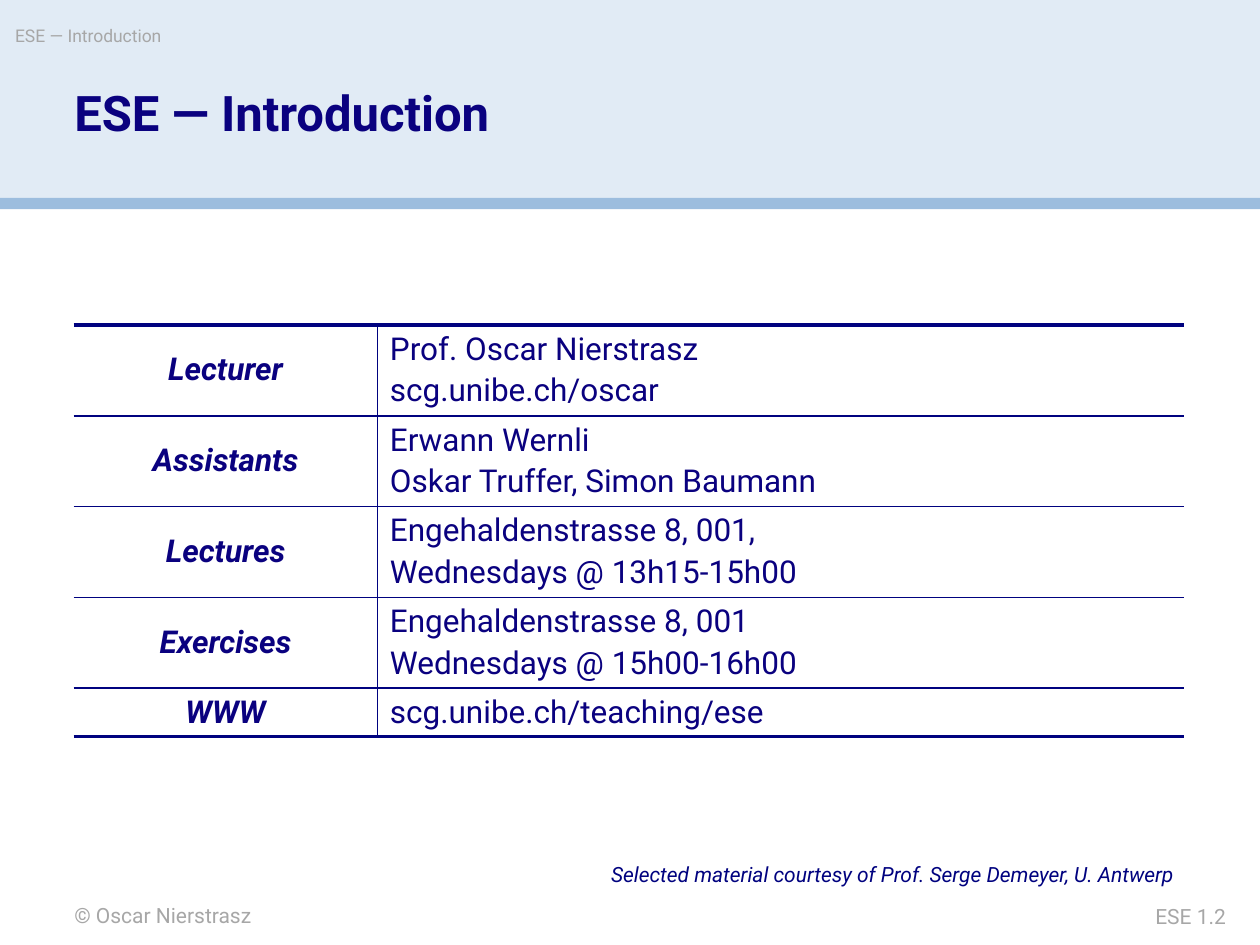
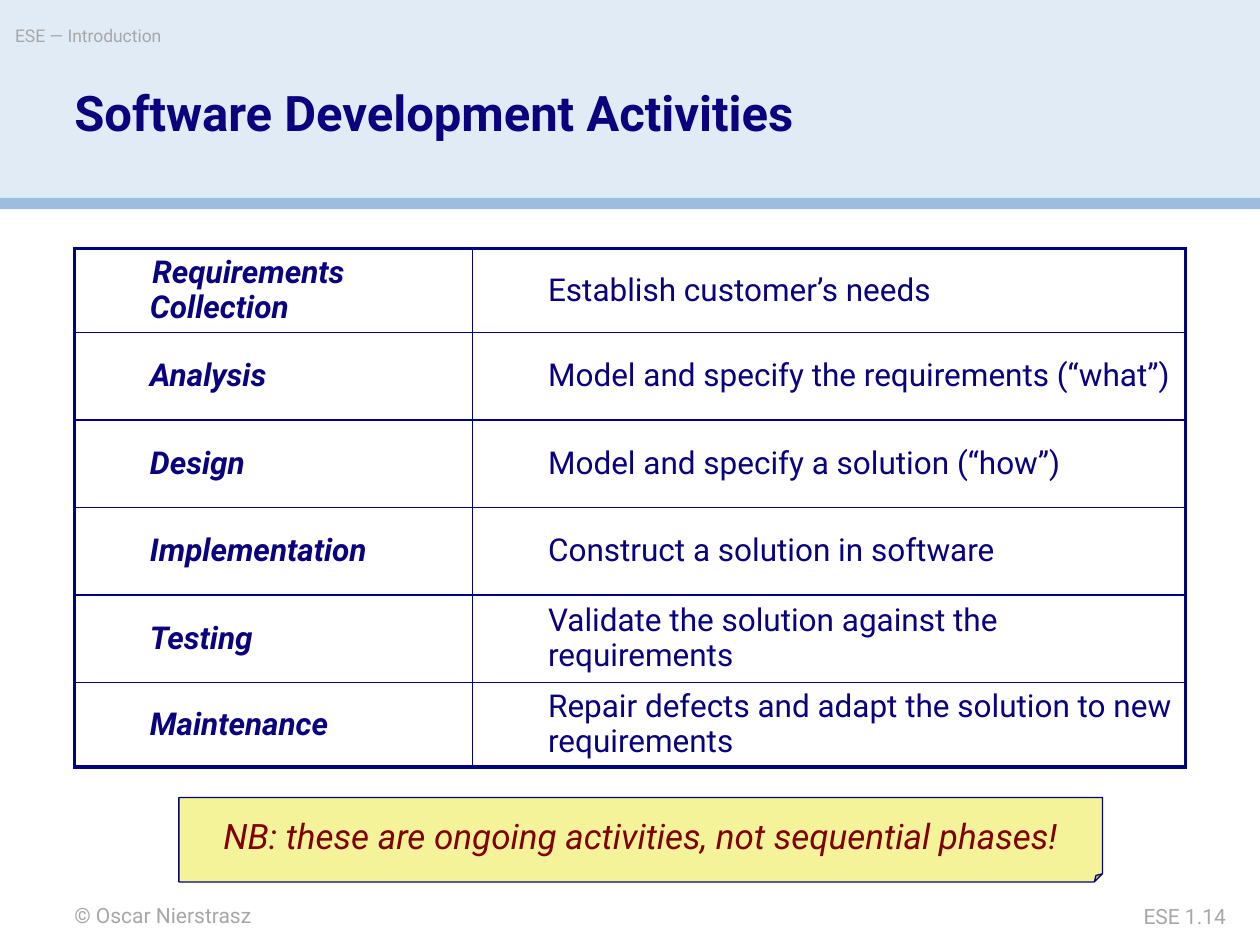
"""Build two lecture slides: the course overview and the development activities."""
from lxml import etree
from pptx import Presentation
from pptx.dml.color import RGBColor
from pptx.enum import shapes, text
from pptx.oxml import ns
from pptx.util import Pt

FONT = "Roboto"
INK = RGBColor(0x0A, 0x01, 0x7F)
RULE = RGBColor(0x00, 0x02, 0x7F)
OUTLINE = RGBColor(0x05, 0x02, 0x7D)
GRAY = RGBColor(0xA7, 0xA7, 0xA7)
BAND = RGBColor(0xE1, 0xEB, 0xF5)
STRIPE = RGBColor(0x9C, 0xBD, 0xDE)
NOTE = RGBColor(0xF5, 0xF3, 0x99)
DARK_RED = RGBColor(0x7F, 0x01, 0x01)
THIN, THICK = 1, 2.25

COURSE_ROWS = [
    ("Lecturer", "Prof. Oscar Nierstrasz\nscg.unibe.ch/oscar"),
    ("Assistants", "Erwann Wernli\nOskar Truffer, Simon Baumann"),
    ("Lectures", "Engehaldenstrasse 8, 001,\nWednesdays @ 13h15-15h00"),
    ("Exercises", "Engehaldenstrasse 8, 001\nWednesdays @ 15h00-16h00"),
    ("WWW", "scg.unibe.ch/teaching/ese"),
]
ACTIVITY_ROWS = [
    ("Requirements Collection", "Establish customer’s needs"),
    ("Analysis", "Model and specify the requirements (“what”)"),
    ("Design", "Model and specify a solution (“how”)"),
    ("Implementation", "Construct a solution in software"),
    ("Testing", "Validate the solution against the requirements"),
    ("Maintenance", "Repair defects and adapt the solution to new requirements"),
]


class Deck:
    """Holds the shared style and the current slide."""

    def __init__(self):
        self.presentation = Presentation()
        self.presentation.slide_width = Pt(720)
        self.presentation.slide_height = Pt(540)
        self.slide = None

    def add_slide(self, title, number):
        """Start a slide with its bands, title, header and footers."""
        self.slide = self.presentation.slides.add_slide(self.presentation.slide_layouts[5])
        self.shape((0, 0, 720, 113.76), BAND)
        self.shape((0, 113.04, 720, 6.48), STRIPE)
        self.title(title)
        self.text_box("© Oscar Nierstrasz", (42.48, 515.52, 300.24, 14.4), 12, GRAY)
        self.text_box("ESE — Introduction", (8.64, 14.4, 424.8, 20.16), 10, GRAY)
        self.text_box(f"ESE {number}", (594, 516.24, 106.56, 14.4), 12, GRAY,
                      align=text.PP_ALIGN.RIGHT)

    def format(self, frame, size, color, bold=False, italic=False,
               align=text.PP_ALIGN.LEFT, spacing=1.0, before=0):
        """Style every paragraph and run of a text frame."""
        for paragraph in frame.paragraphs:
            paragraph.alignment = align
            paragraph.line_spacing = spacing
            paragraph.space_before = Pt(before)
            for run in paragraph.runs:
                run.font.name = FONT
                run.font.size = Pt(size)
                run.font.bold = bold
                run.font.italic = italic
                run.font.color.rgb = color

    def clear_margins(self, frame):
        """Remove the insets of a text frame."""
        frame.margin_left = frame.margin_right = 0
        frame.margin_top = frame.margin_bottom = 0

    def title(self, words):
        """Place the title placeholder in front of the bands."""
        title = self.slide.shapes.title
        self.slide.shapes.element.append(title.element)
        title.left, title.top, title.width, title.height = map(Pt, (42.48, 51.12, 521.28, 64.08))
        frame = title.text_frame
        frame.text = words
        frame.auto_size = text.MSO_AUTO_SIZE.NONE
        frame.vertical_anchor = text.MSO_ANCHOR.TOP
        self.clear_margins(frame)
        self.format(frame, 28, INK, bold=True, spacing=0.9)

    def text_box(self, words, box, size, color, **style):
        """Add a text box without insets."""
        frame = self.slide.shapes.add_textbox(*map(Pt, box)).text_frame
        frame.word_wrap = True
        self.clear_margins(frame)
        frame.text = words
        self.format(frame, size, color, **style)

    def shape(self, box, fill, kind=shapes.MSO_SHAPE.RECTANGLE, line=None):
        """Add a filled preset shape and return it."""
        shape = self.slide.shapes.add_shape(kind, *map(Pt, box))
        shape.shadow.inherit = False
        shape.fill.solid()
        shape.fill.fore_color.rgb = fill
        if line is None:
            shape.line.fill.background()
        else:
            shape.line.color.rgb = line
            shape.line.width = Pt(0.75)
        return shape

    def note(self, words, box):
        """Add a folded note with a centred remark."""
        shape = self.shape(box, NOTE, shapes.MSO_SHAPE.FOLDED_CORNER, OUTLINE)
        guides = next(shape.element.iter(ns.qn("a:avLst")))
        etree.SubElement(guides, ns.qn("a:gd"), name="adj", fmla="val 9600")
        frame = shape.text_frame
        frame.text = words
        frame.word_wrap = False
        frame.vertical_anchor = text.MSO_ANCHOR.MIDDLE
        self.format(frame, 20, DARK_RED, italic=True, align=text.PP_ALIGN.CENTER)

    def borders(self, cell, widths):
        """Draw the left, right, top and bottom borders of a cell."""
        properties = cell._tc.get_or_add_tcPr()
        for side, width in zip("LRTB", widths):
            line = etree.SubElement(properties, ns.qn(f"a:ln{side}"), w=str(Pt(width)))
            if width:
                fill = etree.SubElement(line, ns.qn("a:solidFill"))
                etree.SubElement(fill, ns.qn("a:srgbClr"), val=str(RULE))
            else:
                etree.SubElement(line, ns.qn("a:noFill"))

    def table(self, rows, position, widths, heights, label_align, side=0, indent=0):
        """Add a ruled table of labels and descriptions."""
        size = (sum(widths), sum(heights))
        table = self.slide.shapes.add_table(len(rows), 2, *map(Pt, position + size)).table
        table.first_row = table.horz_banding = False
        for column, width in zip(table.columns, widths):
            column.width = Pt(width)
        for row, height in zip(table.rows, heights):
            row.height = Pt(height)
        last = len(rows) - 1
        for i, row in enumerate(rows):
            for j, words in enumerate(row):
                cell = table.cell(i, j)
                cell.text_frame.text = words
                cell.vertical_anchor = text.MSO_ANCHOR.MIDDLE
                is_label = j == 0
                self.format(cell.text_frame, 18, INK, is_label, is_label,
                            label_align if is_label else text.PP_ALIGN.LEFT, 0.95, 3.6)
                if indent:
                    properties = cell.text_frame.paragraphs[0]._p.get_or_add_pPr()
                    properties.set("marL", str(Pt(indent)))
                    properties.set("indent", str(Pt(1.44 if i == j == 0 else 0)))
                self.borders(cell, (side if is_label else THIN, THIN if is_label else side,
                                    THIN if i else THICK, THICK if i == last else THIN))
                cell.fill.background()


def main():
    """Build and save both slides."""
    deck = Deck()
    deck.add_slide("ESE — Introduction", "1.2")
    deck.text_box("Selected material courtesy of Prof. Serge Demeyer, U. Antwerp",
                  (349.2, 492.48, 345.6, 14.4), 12, RULE, italic=True)
    deck.table(COURSE_ROWS, (42.12, 185.76), (173.52, 460.8), [51] * 4 + [27.4],
               text.PP_ALIGN.CENTER)

    deck.add_slide("Software Development Activities", "1.14")
    deck.table(ACTIVITY_ROWS, (42.48, 141.84), (227.52, 407.52), [47.2] + [50] * 4 + [47.2],
               text.PP_ALIGN.LEFT, side=THICK, indent=36)
    deck.note("NB: these are ongoing activities, not sequential phases!",
              (102.24, 455.76, 527.76, 48.24))
    deck.presentation.save("out.pptx")


if __name__ == "__main__":
    main()
